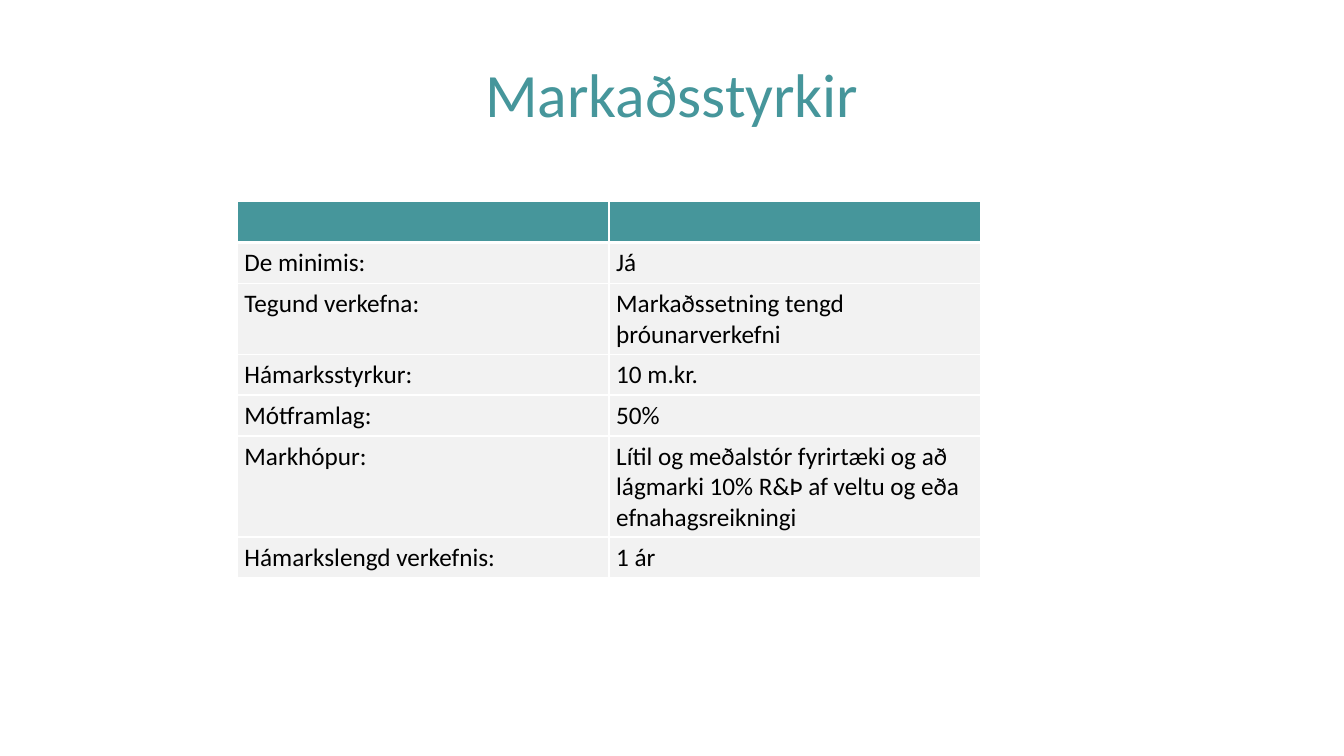
"""Build a slide with a table of terms for marketing grants."""
from lxml.etree import SubElement
from pptx import Presentation
from pptx.dml.color import RGBColor
from pptx.enum.text import MSO_ANCHOR as Anchor, PP_ALIGN as Align
from pptx.oxml.ns import qn
from pptx.util import Cm, Pt

TEAL, PALE, WHITE, BLACK = "46969B", "F2F2F2", "FFFFFF", "000000"

GRANT_TERMS = [
    ("De minimis:", "Já"),
    ("Tegund verkefna:", "Markaðssetning tengd þróunarverkefni"),
    ("Hámarksstyrkur:", "10 m.kr."),
    ("Mótframlag:", "50%"),
    ("Markhópur:", "Lítil og meðalstór fyrirtæki og að lágmarki 10% R&Þ "
                   "af veltu og eða efnahagsreikningi"),
    ("Hámarkslengd verkefnis:", "1 ár"),
]


def paint(fill, color):
    fill.solid()
    fill.fore_color.rgb = RGBColor.from_string(color)


def write(frame, text, *, font="Calibri", size=18, color=BLACK, align=Align.LEFT):
    paragraph = frame.paragraphs[0]
    paragraph.alignment = align
    run = paragraph.add_run()
    run.text = text
    run.font.name = font
    run.font.size = Pt(size)
    run.font.color.rgb = RGBColor.from_string(color)


def draw_borders(cell, color, widths):
    properties = cell._tc.get_or_add_tcPr()
    for side, width in zip("LRTB", widths):
        border = SubElement(properties, qn(f"a:ln{side}"), w=str(Pt(width)))
        SubElement(SubElement(border, qn("a:solidFill")), qn("a:srgbClr"), val=color)


class GrantSlide:
    def __init__(self, deck, accent):
        self.accent = accent
        self.slide = deck.slides.add_slide(deck.slide_layouts[6])

    def title(self, text, left, top, width, height):
        heading = self.slide.shapes.add_textbox(Cm(left), Cm(top), Cm(width), Cm(height))
        paint(heading.fill, WHITE)
        frame = heading.text_frame
        frame.word_wrap = True
        frame.vertical_anchor = Anchor.MIDDLE
        write(frame, text, size=44, color=self.accent, align=Align.CENTER)

    def table(self, terms, left, top, column_width, row_height):
        rows = [("", ""), *terms]
        grid = self.slide.shapes.add_table(
            len(rows), 2, Cm(left), Cm(top),
            Cm(2 * column_width), Cm(row_height * len(rows))).table
        grid.horz_banding = False
        for column in grid.columns:
            column.width = Cm(column_width)
        for index, texts in enumerate(rows):
            grid.rows[index].height = Cm(row_height)
            for cell, text in zip(grid.rows[index].cells, texts):
                self.cell(cell, text, index)

    def cell(self, cell, text, row):
        cell.margin_left = cell.margin_right = Cm(0.18)
        cell.margin_top = cell.margin_bottom = Cm(0.13)
        draw_borders(cell, WHITE, (1, 1, 3 if row == 1 else 1, 3 if row == 0 else 1))
        paint(cell.fill, PALE if row else self.accent)
        if text:
            write(cell.text_frame, text)


def main():
    deck = Presentation()
    deck.slide_width, deck.slide_height = Cm(33.87), Cm(19.05)
    grants = GrantSlide(deck, TEAL)
    grants.title("Markaðsstyrkir", 1.7, 0.76, 30.48, 3.18)
    grants.table(GRANT_TERMS, 5.98, 5.08, 9.37, 1.03)
    deck.save("out.pptx")


if __name__ == "__main__":
    main()
